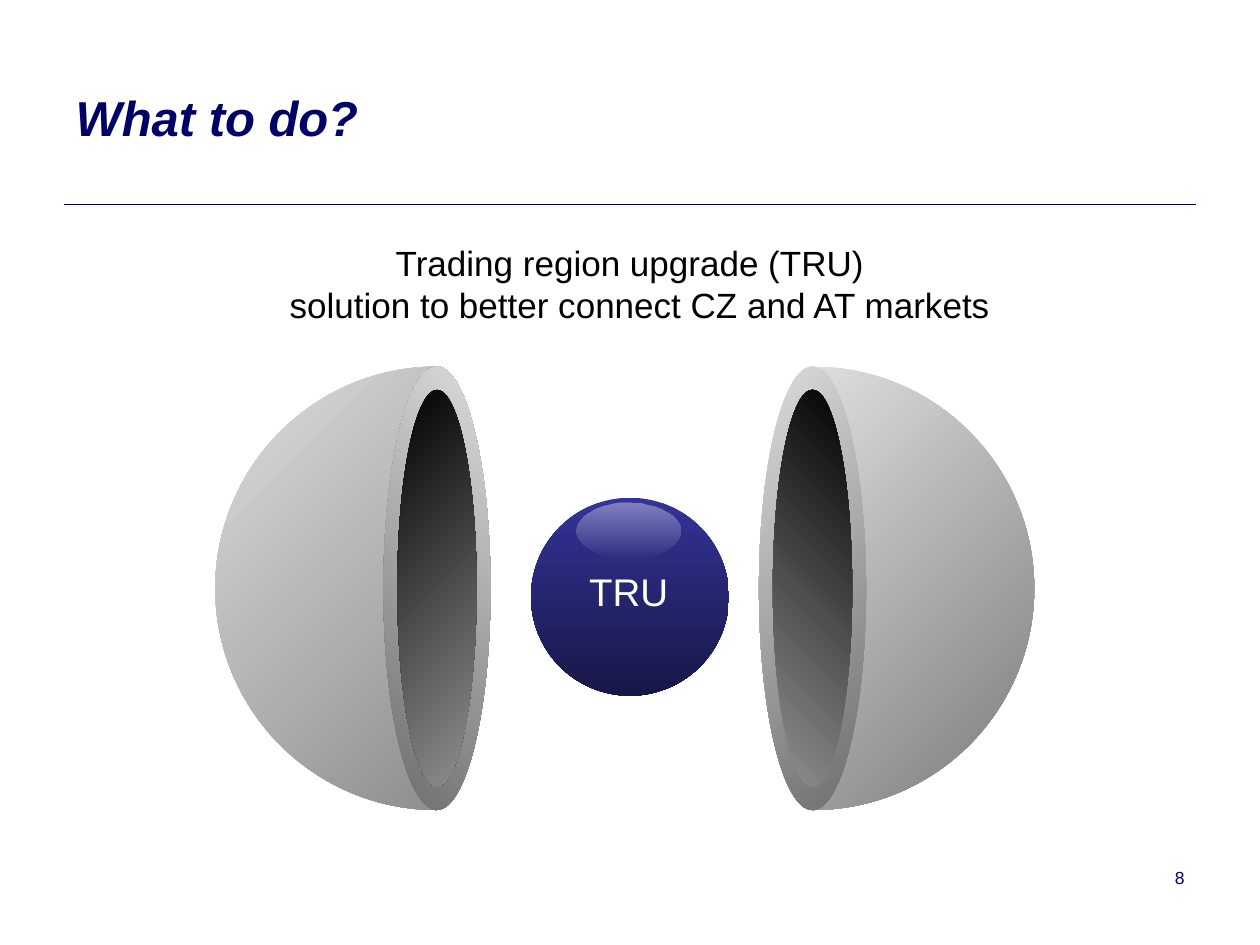
import dataclasses
import math

import pptx
import pptx.dml.color
import pptx.enum.shapes
import pptx.enum.text
import pptx.oxml.ns
import pptx.util
from lxml import etree

Cm = pptx.util.Cm
ALIGN = pptx.enum.text.PP_ALIGN
qn = pptx.oxml.ns.qn
CURVE = 0.5523  # handle length of a quarter circle, as a share of its radius


@dataclasses.dataclass(frozen=True)
class Theme:
    font: str = "Arial"
    navy: str = "000066"
    ball: str = "333399"
    silver: str = "DDDDDD"
    grey: str = "919191"
    black: str = "000000"
    white: str = "FFFFFF"
    title_size: int = 28
    label_size: int = 22
    text_size: int = 20
    number_size: int = 10


@dataclasses.dataclass(frozen=True)
class Stop:
    """A gradient stop; shade and alpha are percentages."""
    color: str
    shade: float = 100
    alpha: float = 100

    def effects(self):
        if self.shade < 100:
            yield from (("gamma", None), ("shade", self.shade), ("invGamma", None))
        if self.alpha < 100:
            yield "alpha", self.alpha


class SlideBuilder:
    def __init__(self, theme, slide):
        self.theme = theme
        self.slide = slide

    def rgb(self, color):
        return pptx.dml.color.RGBColor.from_string(color)

    def style(self, paragraph, size, color, align):
        paragraph.alignment = align
        font = paragraph.font
        font.name, font.size = self.theme.font, pptx.util.Pt(size)
        font.color.rgb = self.rgb(color)
        return font

    def title(self, text, left, top, width, height):
        title = self.slide.shapes.title
        title.left, title.top, title.width, title.height = map(Cm, (left, top, width, height))
        title.text_frame.text = text
        title.text_frame.vertical_anchor = pptx.enum.text.MSO_ANCHOR.MIDDLE
        font = self.style(title.text_frame.paragraphs[0], self.theme.title_size,
                          self.theme.navy, ALIGN.LEFT)
        font.bold = font.italic = True

    def text(self, lines, left, top, width, height, size, color, align=ALIGN.CENTER):
        frame = self.slide.shapes.add_textbox(*map(Cm, (left, top, width, height))).text_frame
        frame.word_wrap = True
        frame.text = "\n".join(lines)
        for paragraph in frame.paragraphs:
            self.style(paragraph, size, color, align)
        return frame

    def rule(self, left, right, y):
        rule = self.slide.shapes.add_connector(
            pptx.enum.shapes.MSO_CONNECTOR.STRAIGHT, Cm(left), Cm(y), Cm(right), Cm(y))
        rule.line.color.rgb = self.rgb(self.theme.navy)
        rule.line.width = pptx.util.Pt(1)
        etree.SubElement(rule._element.spPr, qn("a:effectLst"))

    def group(self):
        return self.slide.shapes.add_group_shape().shapes

    def gradient(self, shape, stops, angle):
        """Fill from the first stop to the last, angle clockwise in degrees."""
        shape.shadow.inherit = False
        shape.line.fill.background()
        shape.fill.gradient()
        shape.fill.gradient_angle = (360 - angle) % 360
        for target, stop in zip(shape.fill.gradient_stops, stops):
            target.color.rgb = self.rgb(stop.color)
        colors = list(shape._element.spPr.iter(qn("a:srgbClr")))
        for element, stop in zip(colors, stops):
            for effect, percent in stop.effects():
                child = etree.SubElement(element, qn(f"a:{effect}"))
                if percent is not None:
                    child.set("val", str(round(percent * 1000)))

    def ellipse(self, group, center_x, center_y, width, height, stops, angle):
        ellipse = group.add_shape(
            pptx.enum.shapes.MSO_SHAPE.OVAL, Cm(center_x - width / 2),
            Cm(center_y - height / 2), Cm(width), Cm(height))
        self.gradient(ellipse, stops, angle)

    def arc(self, group, center, radii, start, quarters, stops, angle):
        """Curved outline of quarter turns, clockwise from the start angle."""
        def point(turn, handle=0):
            cos, sin = math.cos(turn), math.sin(turn)
            unit = (cos - handle * sin, sin + handle * cos)
            return tuple(Cm(c + r * u) for c, r, u in zip(center, radii, unit))

        turns = [math.radians(start + 90 * quarter) for quarter in range(quarters + 1)]
        points = []
        for begin, end in zip(turns, turns[1:]):
            points += [point(begin, CURVE), point(end, -CURVE), point(end)]
        outline = group.build_freeform(*point(turns[0]))
        outline.add_line_segments(points, close=quarters == 4)
        shape = outline.convert_to_shape()

        # Every three points are the handles and the end of one curve
        lines = list(shape._element.iter(qn("a:lnTo")))
        for first in range(0, len(lines), 3):
            curve = etree.Element(qn("a:cubicBezTo"))
            lines[first].addprevious(curve)
            for line in lines[first:first + 3]:
                curve.append(line[0])
                line.getparent().remove(line)
        self.gradient(shape, stops, angle)

    def half_shell(self, center_x, side, dome_shade):
        """Half of a hollow ball that bulges to the left (-1) or the right (1)."""
        theme, center, radius = self.theme, (center_x, 11.86), 4.47
        shell = self.group()
        silver = Stop(theme.silver)
        self.arc(shell, center, (radius, radius), -90 * side, 2,
                 [silver, Stop(theme.silver, dome_shade)], 45)
        rim = [silver, Stop(theme.silver, 49)]
        hollow = [Stop(theme.black), Stop(theme.grey)]
        if side < 0:
            rim_angle, hollow_angle = 315, 45
            rim.reverse()
        else:
            rim_angle, hollow_angle = 45, 315
            hollow.reverse()
        self.arc(shell, center, (1.08, radius), -90, 4, rim, rim_angle)
        self.arc(shell, center, (0.8, 4), -90, 4, hollow, hollow_angle)


def main():
    theme = Theme()
    deck = pptx.Presentation()
    deck.slide_width, deck.slide_height = Cm(25.4), Cm(19.05)
    slide = deck.slides.add_slide(deck.slide_layouts.get_by_name("Title Only"))
    builder = SlideBuilder(theme, slide)

    # Heading and page number
    builder.rule(1.3, 24.1, 4.12)
    builder.title("What to do?", 1.27, 0.76, 18.03, 3.18)
    builder.text(["8"], 18.21, 17.35, 5.92, 1.32, theme.number_size, theme.navy, ALIGN.RIGHT)

    # Glossy ball with its label
    ball = builder.group()
    builder.ellipse(ball, 12.7, 12.03, 3.99, 3.99,
                    [Stop(theme.ball), Stop(theme.ball, shade=46)], 90)
    builder.ellipse(ball, 12.67, 10.7, 2.11, 1.12,
                    [Stop(theme.white, alpha=39), Stop(theme.white, alpha=0)], 90)
    builder.text(["TRU"], 9.17, 11.33, 7.01, 1.19, theme.label_size, theme.white)

    # Two halves of the open shell
    builder.half_shell(16.38, 1, dome_shade=56)
    builder.half_shell(8.81, -1, dome_shade=65)

    # Explanation, second line set slightly to the right
    explanation = builder.text(
        ["Trading region upgrade (TRU)", "solution to better connect CZ and AT markets"],
        3.2, 4.75, 19, 1.96, theme.text_size, theme.black)
    explanation.paragraphs[1]._p.get_or_add_pPr().set("marL", str(Cm(0.4)))

    deck.save("out.pptx")


if __name__ == "__main__":
    main()
